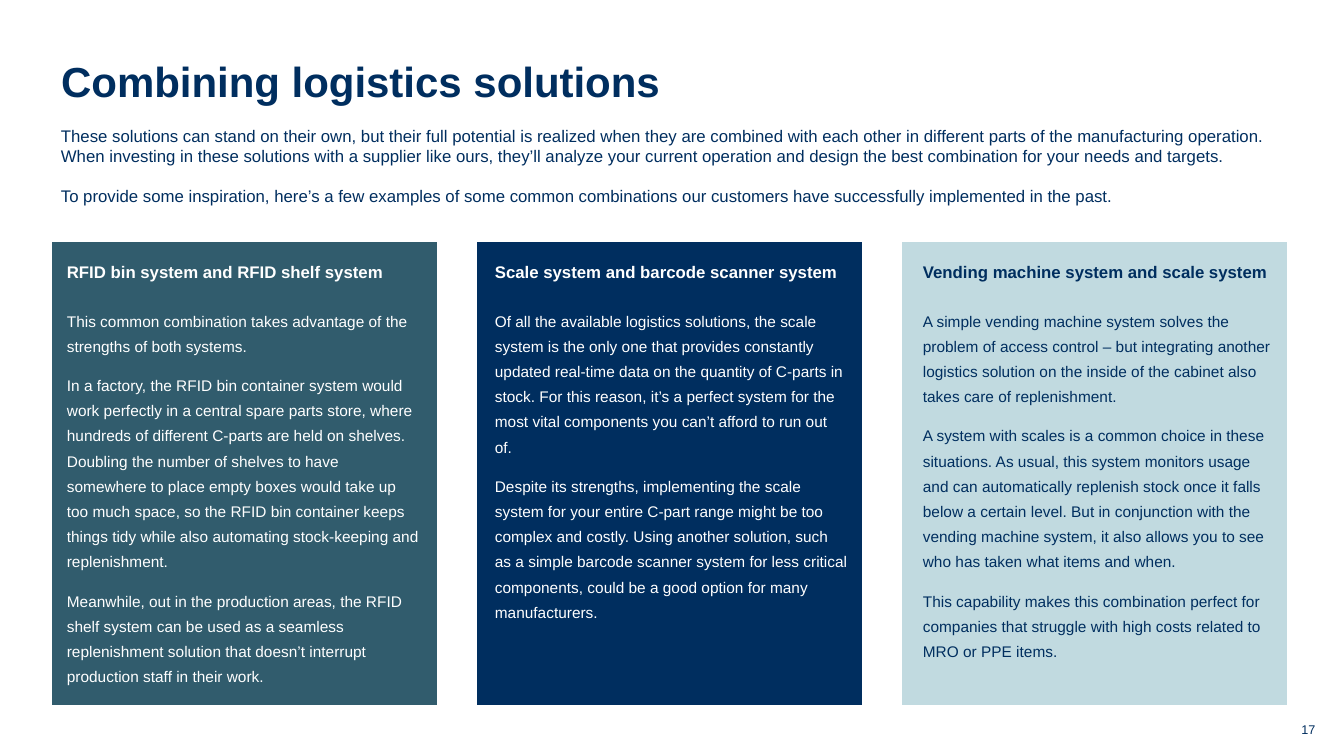
from dataclasses import dataclass

from pptx import Presentation
from pptx import util as u
from pptx.dml.color import RGBColor
from pptx.enum import shapes, text

EMU_PER_PX = 914400 / 100.8
NAVY = "002E5F"
WHITE = "FFFFFF"
CARD_LEFT, CARD_PITCH = 51, 425
COPY_LEFT, COPY_PITCH = 57, 428


@dataclass(frozen=True)
class Card:
    heading: str
    paragraphs: tuple[str, ...]
    fill: str
    ink: str


CARDS = (
    Card(
        "RFID bin system and RFID shelf system",
        (
            "This common combination takes advantage of the strengths of both systems.",
            "In a factory, the RFID bin container system would work perfectly in a central spare "
            "parts store, where hundreds of different C-parts are held on shelves. Doubling the "
            "number of shelves to have somewhere to place empty boxes would take up too much "
            "space, so the RFID bin container keeps things tidy while also automating "
            "stock-keeping and replenishment.",
            "Meanwhile, out in the production areas, the RFID shelf system can be used as a "
            "seamless replenishment solution that doesn’t interrupt production staff in their work.",
        ),
        "315C6D",
        WHITE,
    ),
    Card(
        "Scale system and barcode scanner system",
        (
            "Of all the available logistics solutions, the scale system is the only one that "
            "provides constantly updated real-time data on the quantity of C-parts in stock. For "
            "this reason, it’s a perfect system for the most vital components you can’t afford to "
            "run out of.",
            "Despite its strengths, implementing the scale system for your entire C-part range "
            "might be too complex and costly. Using another solution, such as a simple barcode "
            "scanner system for less critical components, could be a good option for many "
            "manufacturers.",
        ),
        NAVY,
        WHITE,
    ),
    Card(
        "Vending machine system and scale system",
        (
            "A simple vending machine system solves the problem of access control – but "
            "integrating another logistics solution on the inside of the cabinet also takes care "
            "of replenishment.",
            "A system with scales is a common choice in these situations. As usual, this system "
            "monitors usage and can automatically replenish stock once it falls below a certain "
            "level. But in conjunction with the vending machine system, it also allows you to see "
            "who has taken what items and when.",
            "This capability makes this combination perfect for companies that struggle with high "
            "costs related to MRO or PPE items.",
        ),
        "C1DAE0",
        NAVY,
    ),
)

INTRO = (
    "These solutions can stand on their own, but their full potential is realized when they are "
    "combined with each other in different parts of the manufacturing operation. When investing "
    "in these solutions with a supplier like ours, they’ll analyze your current operation and "
    "design the best combination for your needs and targets.",
    "To provide some inspiration, here’s a few examples of some common combinations our customers "
    "have successfully implemented in the past.",
)


def px(length: int) -> int:
    return round(length * EMU_PER_PX)


def colour(value: str) -> RGBColor:
    return RGBColor.from_string(value)


def write(shape, paragraphs: tuple[str, ...], *, size: int, ink: str = NAVY,
          bold: bool = False, spacing=1.0, gap: int = 0,
          align=text.PP_ALIGN.LEFT) -> None:
    frame = shape.text_frame
    frame.word_wrap = True
    frame.auto_size = text.MSO_AUTO_SIZE.NONE
    frame.vertical_anchor = text.MSO_ANCHOR.TOP
    for index, words in enumerate(paragraphs):
        paragraph = frame.add_paragraph() if index else frame.paragraphs[0]
        paragraph.alignment = align
        paragraph.line_spacing = spacing
        paragraph.space_before = u.Pt(gap if index else 0)
        run = paragraph.add_run()
        run.text = words
        run.font.name = "Arial"
        run.font.size = u.Pt(size)
        run.font.bold = bold
        run.font.color.rgb = colour(ink)


def add_text(slide, left: int, top: int, width: int, height: int,
             paragraphs: tuple[str, ...], **style) -> None:
    shape = slide.shapes.add_textbox(px(left), px(top), px(width), px(height))
    write(shape, paragraphs, **style)


def add_card(slide, card: Card, column: int) -> None:
    panel = slide.shapes.add_shape(
        shapes.MSO_SHAPE.RECTANGLE,
        px(CARD_LEFT + column * CARD_PITCH), px(241), px(387), px(465))
    panel.shadow.inherit = False
    panel.fill.solid()
    panel.fill.fore_color.rgb = colour(card.fill)
    panel.line.color.rgb = colour(WHITE)
    panel.line.width = u.Pt(1.5)
    left = COPY_LEFT + column * COPY_PITCH
    add_text(slide, left, 259, 374, 40, (card.heading,),
             size=12, ink=card.ink, bold=True, spacing=0.9)
    add_text(slide, left, 300, 374, 409, card.paragraphs,
             size=11, ink=card.ink, spacing=u.Pt(18), gap=10)


def main() -> None:
    presentation = Presentation()
    presentation.slide_width, presentation.slide_height = px(1344), px(756)
    slide = presentation.slides.add_slide(presentation.slide_layouts[5])
    title = slide.shapes.title
    title.left, title.top, title.width, title.height = px(51), px(56), px(1185), px(79)
    write(title, ("Combining logistics solutions",), size=30, bold=True, spacing=0.9)
    add_text(slide, 51, 121, 1236, 92, INTRO, size=12, gap=14)
    for column, card in enumerate(CARDS):
        add_card(slide, card, column)
    add_text(slide, 1288, 717, 41, 25, ("17",), size=9, align=text.PP_ALIGN.CENTER)
    presentation.save("out.pptx")


if __name__ == "__main__":
    main()
